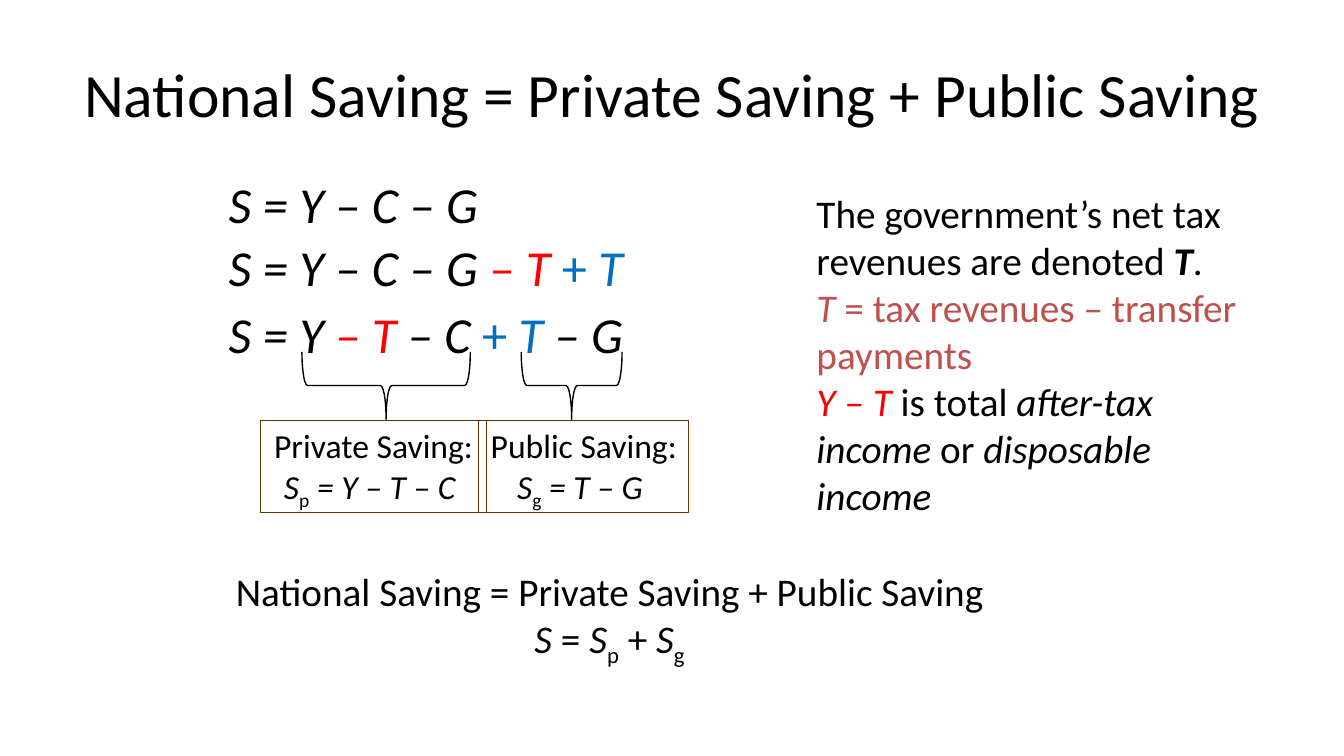
"""Build the slide on national, private and public saving."""
from pptx import Presentation
from pptx.dml.color import RGBColor
from pptx.enum.shapes import MSO_SHAPE
from pptx.enum.text import MSO_ANCHOR, PP_ALIGN
from pptx.util import Inches, Pt

BLACK, RED, BLUE, ROSE, BROWN = "000000", "FF0000", "0070C0", "C0504D", "663300"
SUM = "National Saving = Private Saving + Public Saving"

# A run is (text, style, colour); styles: i italic, b bold, s subscript.
TITLE = [[(SUM, "", BLACK)]]
STEPS = [
    (1.67, 3.08, [("S = Y – C – G", "i", BLACK)]),
    (2.29, 4.17, [("S = Y – C – G ", "i", BLACK), ("– T ", "i", RED),
                  ("+", "", BLUE), (" T", "i", BLUE)]),
    (2.96, 4.17, [("S = Y ", "i", BLACK), ("– T ", "i", RED), ("– C ", "i", BLACK),
                  ("+", "", BLUE), (" T ", "i", BLUE), ("– G", "i", BLACK)]),
]
NOTES = [
    [("The government’s net tax revenues are denoted ", "", BLACK),
     ("T", "bi", BLACK), (".", "", BLACK)],
    [("T", "i", ROSE), (" = tax revenues – transfer payments", "", ROSE)],
    [("Y – T ", "i", RED), ("is total ", "", BLACK), ("after-tax income", "i", BLACK),
     (" or ", "", BLACK), ("disposable income", "i", BLACK)],
]
PARTS = [
    ("Private Saving:", "p", " = Y – T – C ", 2.58, 2.25, 3.83, 1.67),
    ("Public Saving:", "g", " = T – G ", 4.75, 2.08, 5.67, 1.0),
]
TOTAL = [
    [(SUM, "", BLACK)],
    [("S", "i", BLACK), (" = ", "", BLACK), ("S", "i", BLACK), ("p", "s", BLACK),
     (" + ", "", BLACK), ("S", "i", BLACK), ("g", "s", BLACK)],
]
BRACE_TOP, BRACE_DEEP, BOX_TOP, BOX_HIGH = 3.5, 0.67, 4.17, 0.91


def color(code):
    """Turn a hex string into a colour."""
    return RGBColor.from_string(code)


def add_run(para, text, style, code, size):
    """Add one styled run to a paragraph."""
    run = para.add_run()
    run.text = text
    font = run.font
    font.name, font.size = "Calibri", Pt(size)
    font.bold, font.italic = "b" in style, "i" in style
    font.color.rgb = color(code)
    if "s" in style:
        run._r.get_or_add_rPr().set("baseline", "-25000")


def fill_text(shape, paras, size, align=PP_ALIGN.LEFT, anchor=MSO_ANCHOR.TOP):
    """Write paragraphs of runs into a shape; a run of None breaks the line."""
    frame = shape.text_frame
    frame.word_wrap = True
    frame.vertical_anchor = anchor
    for n, runs in enumerate(paras):
        para = frame.add_paragraph() if n else frame.paragraphs[0]
        para.alignment = align
        for run in runs:
            if run is None:
                para.add_line_break()
            else:
                add_run(para, *run, size)


def add_text(slide, place, *args):
    """Add a text box at a place given in inches."""
    fill_text(slide.shapes.add_textbox(*map(Inches, place)), *args)


def add_form(slide, kind, place, code, width):
    """Add an unfilled outline shape."""
    shape = slide.shapes.add_shape(kind, *map(Inches, place))
    shape.shadow.inherit = False
    shape.fill.background()
    shape.line.color.rgb = color(code)
    shape.line.width = Pt(width)
    return shape


def add_part(slide, name, sub, rest, left, wide, mid, span):
    """Add a brace centred at mid and the box that names it."""
    top = BRACE_TOP + (BRACE_DEEP - span) / 2 - 0.01
    place = (mid - BRACE_DEEP / 2, top, BRACE_DEEP, span)
    brace = add_form(slide, MSO_SHAPE.LEFT_BRACE, place, BLACK, 1)
    brace.rotation = 270
    brace.adjustments[0] = 0.083
    box = add_form(slide, MSO_SHAPE.RECTANGLE, (left, BOX_TOP, wide, BOX_HIGH), BROWN, 0.75)
    runs = [(name, "", BLACK), None, ("S", "i", BLACK), (sub, "s", BLACK), (rest, "i", BLACK)]
    fill_text(box, [runs], 24, PP_ALIGN.CENTER)


def main():
    """Build and save the slide."""
    deck = Presentation()
    deck.slide_width, deck.slide_height = Inches(13.33), Inches(7.5)
    slide = deck.slides.add_slide(deck.slide_layouts[6])
    add_text(slide, (0.67, 0.3, 12, 1.25), TITLE, 44, PP_ALIGN.CENTER, MSO_ANCHOR.MIDDLE)
    for top, wide, runs in STEPS:
        add_text(slide, (2.17, top, wide, 0.71), [runs], 36)
    add_text(slide, (8, 1.83, 4.67, 3.4), NOTES, 28)
    for part in PARTS:
        add_part(slide, *part)
    add_text(slide, (1.92, 5.58, 8.25, 1.04), TOTAL, 28, PP_ALIGN.CENTER)
    deck.save("out.pptx")


if __name__ == "__main__":
    main()
